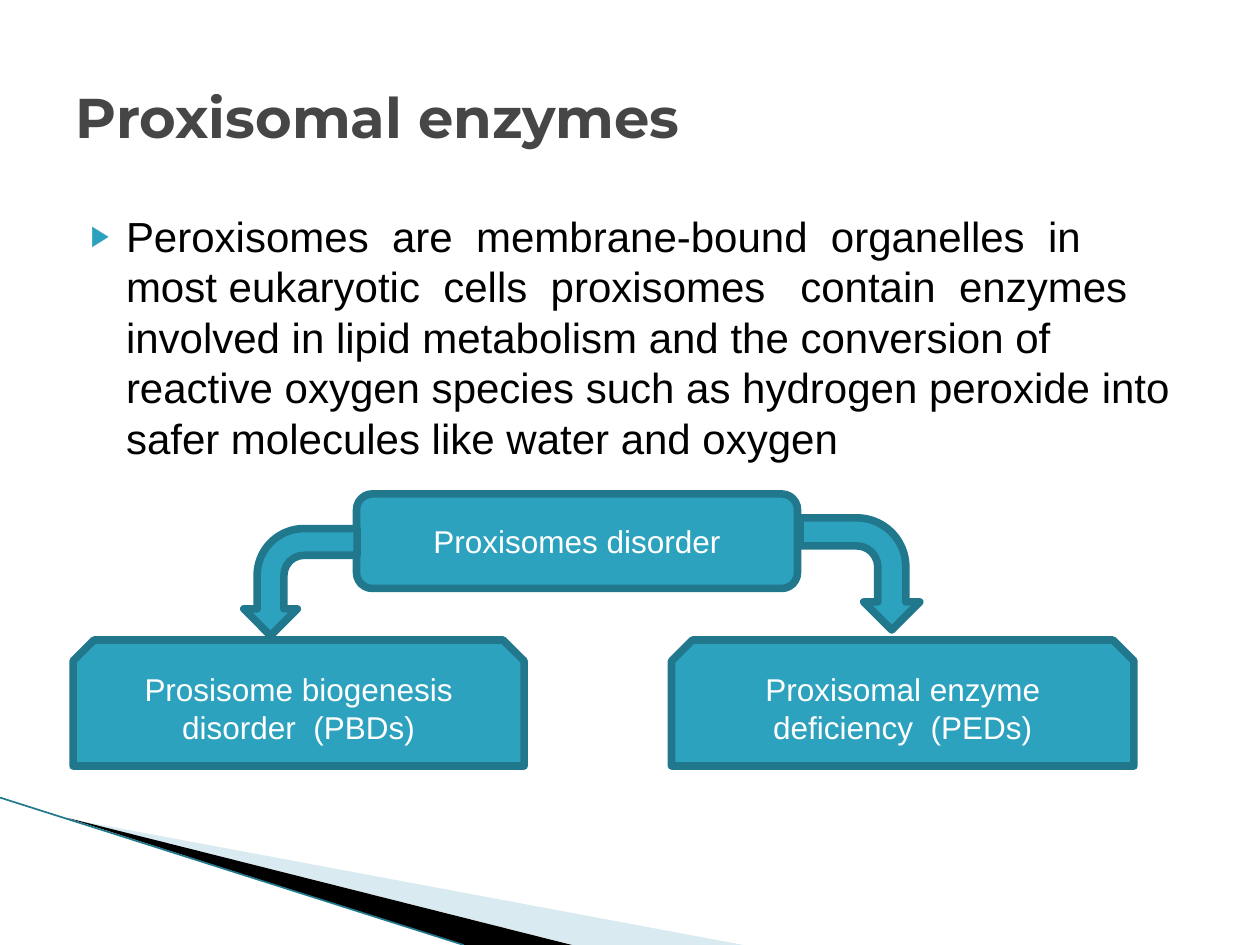
from lxml.etree import SubElement
from pptx import Presentation
from pptx.dml.color import RGBColor
from pptx.enum.shapes import MSO_CONNECTOR, MSO_SHAPE
from pptx.enum.text import MSO_ANCHOR, PP_ALIGN
from pptx.oxml.ns import qn
from pptx.util import Inches, Pt

TEAL, DARK_TEAL, PALE_BLUE = "2DA2BF", "21788D", "D9EAF1"
BLACK, WHITE, GREY = "000000", "FFFFFF", "464646"


def rgb(value):
    """Return the colour for a hex string."""
    return RGBColor.from_string(value)


class SlideBuilder:
    """Hold the style and the current slide."""

    body_font, title_font = "Arial", "Montserrat"
    outline = 4.33

    def __init__(self, prs):
        """Add a title and content slide."""
        self.slide = prs.slides.add_slide(prs.slide_layouts[1])
        self.shapes = self.slide.shapes

    def place(self, sp, box):
        """Move and size a shape."""
        sp.left, sp.top, sp.width, sp.height = map(Inches, box)

    def set_text(self, sp, text, size, color, font, align, bold=False):
        """Set the single paragraph of a shape and format it."""
        tf = sp.text_frame
        tf.word_wrap = True
        tf.text = text
        p = tf.paragraphs[0]
        p.alignment = align
        p.space_before = Pt(0)
        r = p.runs[0]
        r.font.name, r.font.size, r.font.bold = font, Pt(size), bold
        r.font.color.rgb = rgb(color)
        return p

    def title(self, text, box):
        """Fill the title placeholder."""
        sp = self.shapes.title
        self.place(sp, box)
        self.set_text(sp, text, 32, GREY, self.title_font, PP_ALIGN.LEFT, True)
        sp.text_frame.vertical_anchor = MSO_ANCHOR.MIDDLE

    def body(self, text, box):
        """Fill the body placeholder with one bulleted paragraph."""
        sp = self.slide.placeholders[1]
        self.place(sp, box)
        p = self.set_text(sp, text, 24, BLACK, self.body_font, PP_ALIGN.LEFT)
        pPr = p._p.get_or_add_pPr()
        pPr.set("marL", str(Inches(0.4)))
        pPr.set("indent", str(Inches(-0.28)))
        SubElement(SubElement(pPr, qn("a:buClr")), qn("a:srgbClr"), val=TEAL)
        SubElement(pPr, qn("a:buSzPct"), val="68000")
        SubElement(pPr, qn("a:buFont"), typeface=self.body_font)
        SubElement(pPr, qn("a:buChar"), char="▶")

    def shape(self, kind, box):
        """Add an outlined teal shape."""
        sp = self.shapes.add_shape(kind, *map(Inches, box))
        sp.shadow.inherit = False
        sp.fill.solid()
        sp.fill.fore_color.rgb = rgb(TEAL)
        sp.line.color.rgb = rgb(DARK_TEAL)
        sp.line.width = Pt(self.outline)
        return sp

    def label(self, kind, box, text):
        """Add a shape with centred text."""
        sp = self.shape(kind, box)
        self.set_text(sp, text, 18, WHITE, self.body_font, PP_ALIGN.CENTER)
        sp.text_frame.vertical_anchor = MSO_ANCHOR.MIDDLE

    def bent_arrow(self, box, rotation, flip=False):
        """Add a rotated bent arrow."""
        sp = self.shape(MSO_SHAPE.BENT_ARROW, box)
        sp.rotation = rotation
        if flip:
            sp.element.spPr.xfrm.set("flipH", "1")

    def wedge(self, points, color):
        """Add a filled polygon."""
        pts = [(Inches(x), Inches(y)) for x, y in points]
        builder = self.shapes.build_freeform(*pts[0])
        builder.add_line_segments(pts[1:])
        sp = builder.convert_to_shape()
        sp.shadow.inherit = False
        sp.fill.solid()
        sp.fill.fore_color.rgb = rgb(color)
        sp.line.fill.background()

    def line(self, start, end, color, width):
        """Add a straight line."""
        ends = map(Inches, (*start, *end))
        sp = self.shapes.add_connector(MSO_CONNECTOR.STRAIGHT, *ends)
        sp.line.color.rgb = rgb(color)
        sp.line.width = Pt(width)
        SubElement(sp.element.spPr, qn("a:effectLst"))


def main():
    """Build and save the slide."""
    prs = Presentation()
    prs.slide_width, prs.slide_height = Inches(10), Inches(7.5)
    s = SlideBuilder(prs)
    s.wedge([(0.55, 6.5), (5.9, 7.5), (4.55, 7.5)], PALE_BLUE)
    s.wedge([(0.53, 6.49), (4.54, 7.5), (3.68, 7.5)], BLACK)
    s.line((0, 6.33), (3.68, 7.5), DARK_TEAL, 0.95)
    s.title("Proxisomal enzymes", (0.5, 0.3, 9, 1.25))
    s.body(
        "Peroxisomes  are  membrane-bound  organelles  in  most eukaryotic  "
        "cells  proxisomes   contain  enzymes  involved in lipid metabolism "
        "and the conversion of reactive oxygen species such as hydrogen "
        "peroxide into safer molecules like water and oxygen",
        (0.5, 1.62, 9, 4.95),
    )
    s.label(MSO_SHAPE.ROUNDED_RECTANGLE, (2.83, 3.92, 3.5, 0.75),
            "Proxisomes disorder")
    s.bent_arrow((6.38, 4.08, 0.89, 0.95), 90)
    s.bent_arrow((1.96, 4.17, 0.85, 0.9), 270, flip=True)
    for left, width, text in (
        (0.58, 3.58, "Prosisome biogenesis disorder  (PBDs)"),
        (5.33, 3.67, "Proxisomal enzyme deficiency  (PEDs)"),
    ):
        s.label(MSO_SHAPE.SNIP_2_SAME_RECTANGLE, (left, 5.08, width, 1), text)
    prs.save("out.pptx")


if __name__ == "__main__":
    main()
